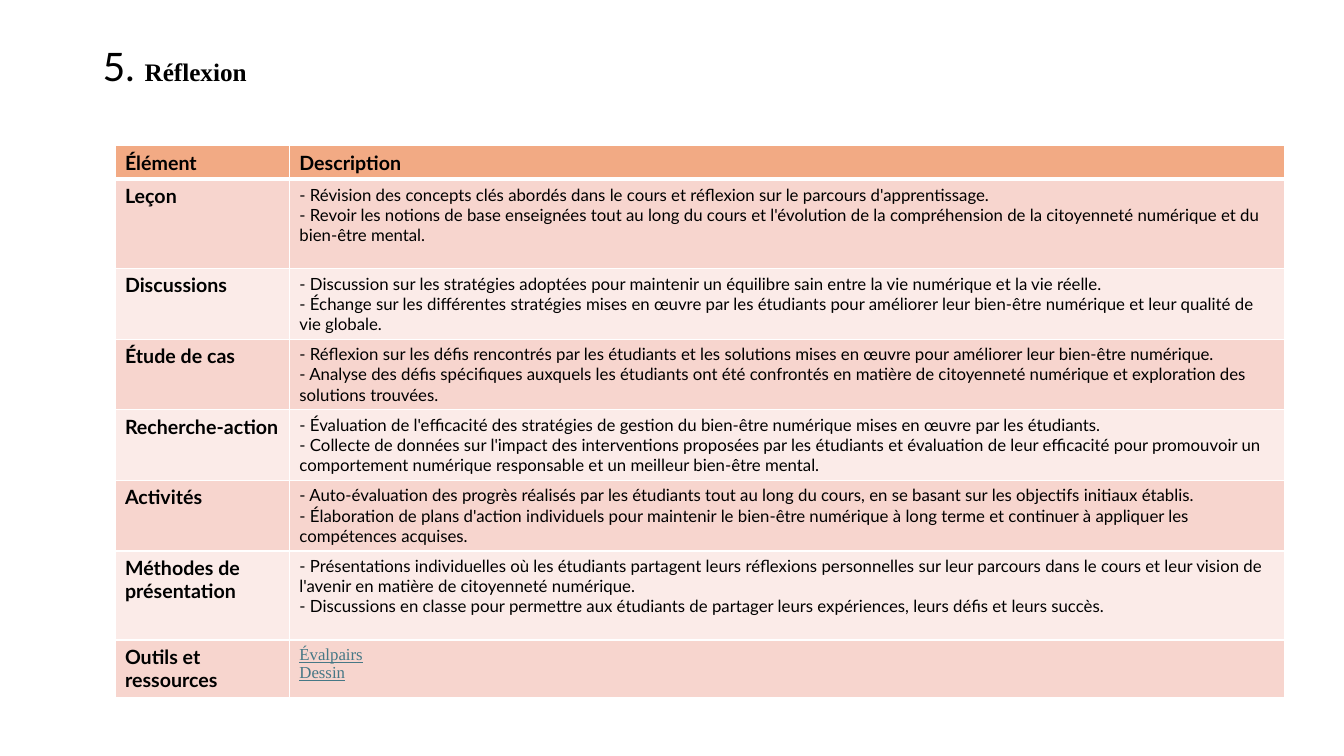
from lxml.etree import SubElement
from pptx import Presentation
from pptx.dml.color import RGBColor
from pptx.enum.text import MSO_ANCHOR
from pptx.oxml.ns import qn
from pptx.util import Inches, Pt

BLACK = RGBColor(0x00, 0x00, 0x00)
WHITE = RGBColor(0xFF, 0xFF, 0xFF)
ORANGE = RGBColor(0xF2, 0xAA, 0x84)
PINK = RGBColor(0xF7, 0xD5, 0xCE)
PALE = RGBColor(0xFB, 0xEB, 0xE8)
TEAL = RGBColor(0x46, 0x78, 0x86)

NUMBER = {"name": "Lato", "size": Pt(28), "bold": False, "color": BLACK}
TITLE = {"name": "Times New Roman", "size": Pt(18), "bold": True, "color": BLACK}
LABEL = {"name": "Lato", "size": Pt(14), "bold": True, "color": BLACK}
BODY = {"name": "Lato", "size": Pt(12), "bold": False, "color": BLACK}
TOOL = {"name": "Times New Roman", "size": Pt(12), "bold": False,
        "underline": True, "color": TEAL}

COLUMNS = [12.98, 74.04]
ROWS = [
    (4.44, "Élément", LABEL, ["Description"]),
    (11.8, "Leçon", BODY, [
        "- Révision des concepts clés abordés dans le cours et réflexion sur le parcours d'apprentissage.",
        "- Revoir les notions de base enseignées tout au long du cours et l'évolution de la "
        "compréhension de la citoyenneté numérique et du bien-être mental."]),
    (9.33, "Discussions", BODY, [
        "- Discussion sur les stratégies adoptées pour maintenir un équilibre sain entre la vie "
        "numérique et la vie réelle.",
        "- Échange sur les différentes stratégies mises en œuvre par les étudiants pour améliorer "
        "leur bien-être numérique et leur qualité de vie globale."]),
    (9.33, "Étude de cas", BODY, [
        "- Réflexion sur les défis rencontrés par les étudiants et les solutions mises en œuvre "
        "pour améliorer leur bien-être numérique.",
        "- Analyse des défis spécifiques auxquels les étudiants ont été confrontés en matière de "
        "citoyenneté numérique et exploration des solutions trouvées."]),
    (9.33, "Recherche-action", BODY, [
        "- Évaluation de l'efficacité des stratégies de gestion du bien-être numérique mises en "
        "œuvre par les étudiants.",
        "- Collecte de données sur l'impact des interventions proposées par les étudiants et "
        "évaluation de leur efficacité pour promouvoir un comportement numérique responsable et "
        "un meilleur bien-être mental."]),
    (9.33, "Activités", BODY, [
        "- Auto-évaluation des progrès réalisés par les étudiants tout au long du cours, en se "
        "basant sur les objectifs initiaux établis.",
        "- Élaboration de plans d'action individuels pour maintenir le bien-être numérique à long "
        "terme et continuer à appliquer les compétences acquises."]),
    (11.8, "Méthodes de présentation", BODY, [
        "- Présentations individuelles où les étudiants partagent leurs réflexions personnelles "
        "sur leur parcours dans le cours et leur vision de l'avenir en matière de citoyenneté numérique.",
        "- Discussions en classe pour permettre aux étudiants de partager leurs expériences, "
        "leurs défis et leurs succès."]),
    (7.56, "Outils et ressources", TOOL, ["Évalpairs", "Dessin"]),
]


class Deck:
    """Draws styled elements on one slide, with lengths in percent of its size."""

    def __init__(self):
        self.prs = Presentation()
        self.prs.slide_width, self.prs.slide_height = Inches(13.33), Inches(7.5)
        self.s = self.prs.slides.add_slide(self.prs.slide_layouts[6])

    def x(self, share):
        return round(self.prs.slide_width * share / 100)

    def y(self, share):
        return round(self.prs.slide_height * share / 100)

    def run(self, p, text, style):
        r = p.add_run()
        r.text = text
        for key, value in style.items():
            if key == "color":
                r.font.color.rgb = value
            else:
                setattr(r.font, key, value)

    def title(self, left, top, width, height, runs):
        sp = self.s.shapes.add_textbox(self.x(left), self.y(top), self.x(width), self.y(height))
        tf = sp.text_frame
        tf.word_wrap = True
        tf.vertical_anchor = MSO_ANCHOR.MIDDLE
        p = tf.paragraphs[0]
        p.line_spacing = 0.9
        for text, style in runs:
            self.run(p, text, style)

    def cell(self, cell, lines, style, fill, bottom):
        tcPr = cell._tc.get_or_add_tcPr()
        for side, width in {"L": 1, "R": 1, "T": 1, "B": bottom}.items():
            ln = SubElement(tcPr, qn(f"a:ln{side}"), w=str(Pt(width)))
            SubElement(SubElement(ln, qn("a:solidFill")), qn("a:srgbClr"), val=str(WHITE))
        cell.fill.solid()
        cell.fill.fore_color.rgb = fill
        tf = cell.text_frame
        for i, line in enumerate(lines):
            p = tf.add_paragraph() if i else tf.paragraphs[0]
            self.run(p, line, style)

    def table(self, left, top, columns, rows):
        height = sum(row[0] for row in rows)
        tbl = self.s.shapes.add_table(len(rows), len(columns), self.x(left), self.y(top),
                                      self.x(sum(columns)), self.y(height)).table
        for column, width in zip(tbl.columns, columns):
            column.width = self.x(width)
        for i, (height, label, style, lines) in enumerate(rows):
            tbl.rows[i].height = self.y(height)
            fill = (PINK if i % 2 else PALE) if i else ORANGE
            bottom = 1 if i else 3
            self.cell(tbl.cell(i, 0), [label], LABEL, fill, bottom)
            self.cell(tbl.cell(i, 1), lines, style, fill, bottom)


def main():
    deck = Deck()
    deck.title(6.9, 2, 86.27, 14.13, [("5. ", NUMBER), ("Réflexion", TITLE)])
    deck.table(8.55, 19.27, COLUMNS, ROWS)
    deck.prs.save("out.pptx")


if __name__ == "__main__":
    main()
